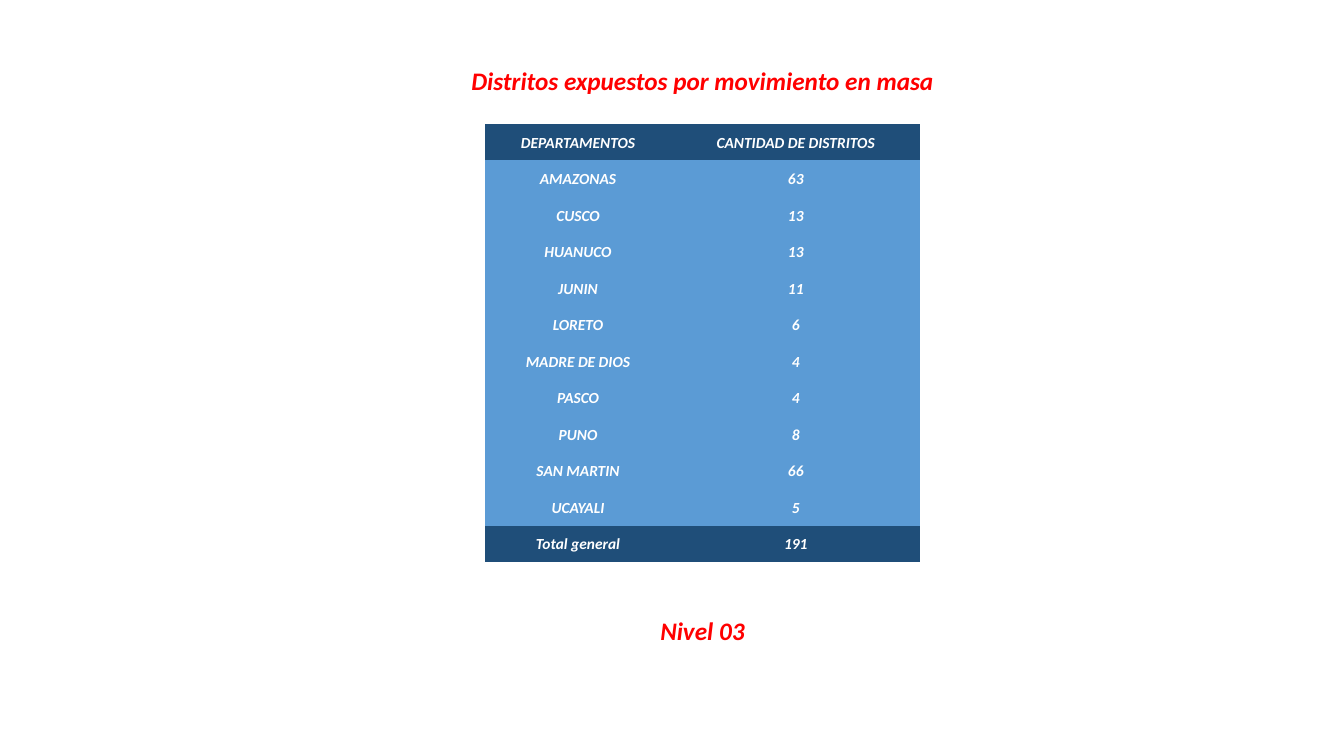
from pptx import Presentation
from pptx import util as u
from pptx.dml import color
from pptx.enum import text

COLORS = {"title": "FF0000", "cell": "FFFFFF", "band": "1F4E79", "body": "5B9BD5"}
PLAIN_TABLE = "{2D5ABB26-0587-4C30-8999-92F81FD0307C}"
AXIS = 52.27

DISTRICTS = [
    ("DEPARTAMENTOS", "CANTIDAD DE DISTRITOS"),
    ("AMAZONAS", "63"),
    ("CUSCO", "13"),
    ("HUANUCO", "13"),
    ("JUNIN", "11"),
    ("LORETO", "6"),
    ("MADRE DE DIOS", "4"),
    ("PASCO", "4"),
    ("PUNO", "8"),
    ("SAN MARTIN", "66"),
    ("UCAYALI", "5"),
    ("Total general", "191"),
]


class Deck:
    font = "Calibri"

    def __init__(self, width, height):
        self.prs = Presentation()
        self.prs.slide_width = u.Inches(width)
        self.prs.slide_height = u.Inches(height)
        self.slide = self.prs.slides.add_slide(self.prs.slide_layouts[6])

    def box(self, top, width, height):
        w, h = self.prs.slide_width, self.prs.slide_height
        shares = ((AXIS - width / 2, w), (top, h), (width, w), (height, h))
        return [u.Emu(round(share * size / 100)) for share, size in shares]

    def add_text(self, tf, words, size, tone):
        p = tf.paragraphs[0]
        p.alignment = text.PP_ALIGN.CENTER
        r = p.add_run()
        r.text = words
        r.font.name = self.font
        r.font.size = u.Pt(size)
        r.font.bold = r.font.italic = True
        r.font.color.rgb = color.RGBColor.from_string(COLORS[tone])

    def heading(self, words, top, width, wrap):
        sp = self.slide.shapes.add_textbox(*self.box(top, width, 5.33))
        tf = sp.text_frame
        tf.word_wrap = wrap
        tf.auto_size = text.MSO_AUTO_SIZE.SHAPE_TO_FIT_TEXT
        self.add_text(tf, words, 18, "title")

    def table(self, rows, top, width, height, ratio):
        area = self.box(top, width, height)
        frame = self.slide.shapes.add_table(len(rows), len(ratio), *area)
        table = frame.table
        frame._element.xpath(".//a:tableStyleId")[0].text = PLAIN_TABLE
        for column, part in zip(table.columns, ratio):
            column.width = u.Emu(round(area[2] * part / sum(ratio)))
        for i, values in enumerate(rows):
            tone = "band" if i in (0, len(rows) - 1) else "body"
            for j, value in enumerate(values):
                self.cell(table.cell(i, j), value, tone)

    def cell(self, cell, words, tone):
        cell.fill.solid()
        cell.fill.fore_color.rgb = color.RGBColor.from_string(COLORS[tone])
        cell.vertical_anchor = text.MSO_ANCHOR.MIDDLE
        cell.margin_left = cell.margin_right = cell.margin_top = u.Inches(0.01)
        cell.margin_bottom = 0
        self.add_text(cell.text_frame, words, 11, "cell")


def main():
    deck = Deck(13.33, 7.5)
    deck.heading("Distritos expuestos por movimiento en masa", 8, 36.31, False)
    deck.heading("Nivel 03", 80.8, 12.53, True)
    deck.table(DISTRICTS, 16.4, 32.41, 58, (3, 4))
    deck.prs.save("out.pptx")


if __name__ == "__main__":
    main()
